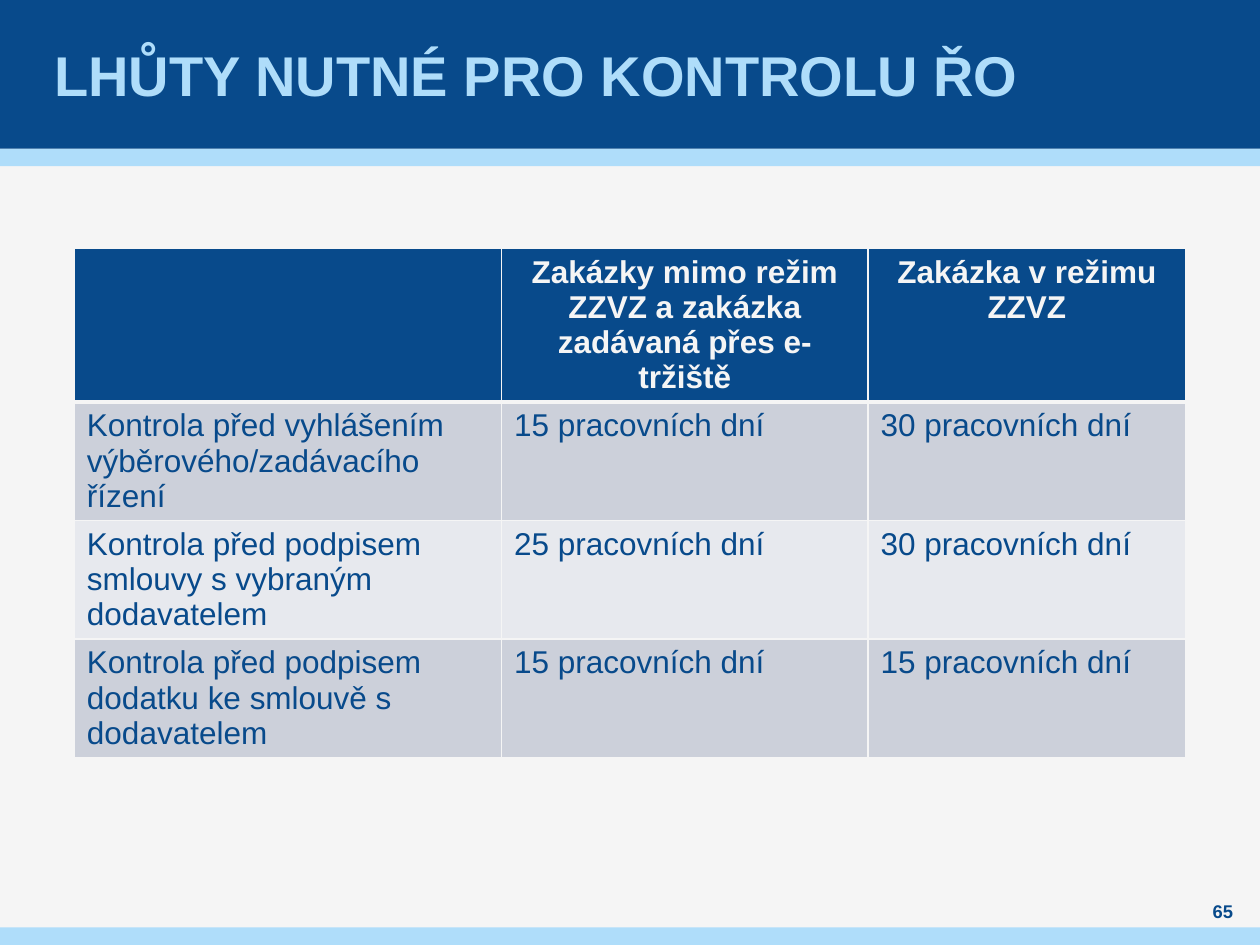
from dataclasses import dataclass
from lxml.etree import SubElement as Sub
from pptx import Presentation
from pptx.dml.color import RGBColor as Rgb
from pptx.enum.shapes import MSO_SHAPE as Shape
from pptx.enum.text import MSO_ANCHOR as Anchor, MSO_AUTO_SIZE as Fit, PP_ALIGN as Align
from pptx.oxml.ns import qn
from pptx.util import Inches, Pt


@dataclass(frozen=True)
class Theme:
    font: str = "Arial"
    navy: str = "084A8B"
    sky: str = "AFDDFA"
    paper: str = "F5F5F5"
    bands: tuple = ("CCD0DA", "E7E9EE")
    title: float = 32
    body: float = 18
    number: float = 10.5


THEME = Theme()
WIDTHS = (3.39, 2.91, 2.52)
HEIGHTS = (1.21, 0.94, 0.94, 0.94)
ROWS = (
    ("", "Zakázky mimo režim ZZVZ a zakázka zadávaná přes e-tržiště", "Zakázka v režimu ZZVZ"),
    ("Kontrola před vyhlášením výběrového/zadávacího řízení", "15 pracovních dní", "30 pracovních dní"),
    ("Kontrola před podpisem smlouvy s vybraným dodavatelem", "25 pracovních dní", "30 pracovních dní"),
    ("Kontrola před podpisem dodatku ke smlouvě s dodavatelem", "15 pracovních dní", "15 pracovních dní"),
)


def paint(fill, color):
    fill.solid()
    fill.fore_color.rgb = Rgb.from_string(color)


def write(frame, text, size, color, bold=False, align=Align.LEFT):
    para = frame.paragraphs[0]
    para.alignment = align
    run = para.add_run()
    run.text = text
    font = run.font
    font.name, font.size, font.bold = THEME.font, Pt(size), bold
    font.color.rgb = Rgb.from_string(color)


def set_frame(frame, side=0):
    frame.word_wrap = True
    frame.auto_size = Fit.NONE
    frame.vertical_anchor = Anchor.MIDDLE
    frame.margin_left = frame.margin_right = Inches(side)
    frame.margin_top = frame.margin_bottom = 0


def add_bar(slide, top, height, color):
    bar = slide.shapes.add_shape(Shape.RECTANGLE, 0, Inches(top), Inches(10), Inches(height))
    bar.shadow.inherit = False
    paint(bar.fill, color)
    bar.line.fill.background()


def add_title(slide, text):
    title = slide.shapes.title
    title.left, title.top = Inches(0.39), 0
    title.width, title.height = Inches(9.21), Inches(1.18)
    set_frame(title.text_frame, 0.04)
    write(title.text_frame, text, THEME.title, THEME.sky, True)
    slide.shapes._spTree.append(title._element)


def add_edges(cell, base):
    props = cell._tc.get_or_add_tcPr()
    for side, width in (("L", 1), ("R", 1), ("T", 1), ("B", base)):
        line = Sub(props, qn(f"a:ln{side}"), w=str(Pt(width)))
        Sub(Sub(line, qn("a:solidFill")), qn("a:srgbClr"), val=THEME.paper)


def fill_cell(cell, text, row):
    head = row == 0
    add_edges(cell, 3 if head else 1)
    paint(cell.fill, THEME.navy if head else THEME.bands[(row - 1) % 2])
    if text:
        write(cell.text_frame, text, THEME.body, THEME.paper if head else THEME.navy,
              head, Align.CENTER if head else Align.LEFT)


def add_grid(slide):
    grid = slide.shapes.add_table(
        len(ROWS), len(WIDTHS), Inches(0.59), Inches(1.97),
        Inches(sum(WIDTHS)), Inches(sum(HEIGHTS))).table
    for col, width in zip(grid.columns, WIDTHS):
        col.width = Inches(width)
    for row, height in zip(grid.rows, HEIGHTS):
        row.height = Inches(height)
    for r, texts in enumerate(ROWS):
        for c, text in enumerate(texts):
            fill_cell(grid.cell(r, c), text, r)


def add_number(slide, text):
    box = slide.shapes.add_textbox(Inches(9.45), Inches(7.13), Inches(0.51), Inches(0.2))
    set_frame(box.text_frame)
    write(box.text_frame, text, THEME.number, THEME.navy, True, Align.CENTER)


def main():
    deck = Presentation()
    deck.slide_width, deck.slide_height = Inches(10), Inches(7.5)
    slide = deck.slides.add_slide(deck.slide_layouts[5])
    paint(slide.background.fill, THEME.paper)
    add_bar(slide, 1.18, 0.14, THEME.sky)
    add_bar(slide, 0, 1.18, THEME.navy)
    add_bar(slide, 7.36, 0.14, THEME.sky)
    add_title(slide, "LHŮTY NUTNÉ PRO KONTROLU ŘO")
    add_grid(slide)
    add_number(slide, "65")
    deck.save("out.pptx")


if __name__ == "__main__":
    main()
